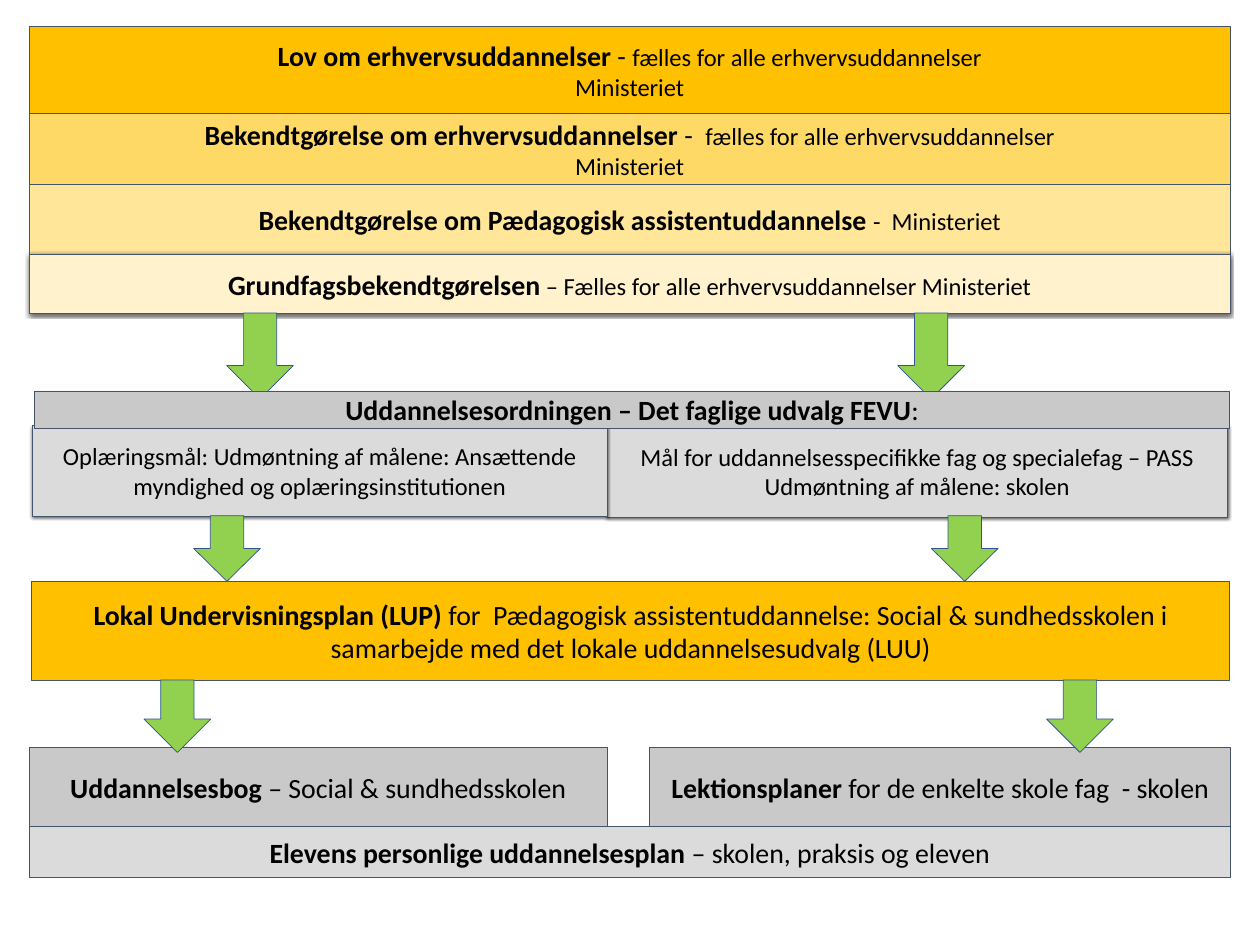
from lxml.etree import SubElement
from pptx import Presentation
from pptx.dml.color import RGBColor
from pptx.enum.shapes import MSO_SHAPE as Shape
from pptx.enum.text import MSO_ANCHOR as Anchor, PP_ALIGN as Align
from pptx.oxml.ns import qn
from pptx.util import Inches, Pt

COLORS = {
    "gold": "FFC000", "amber": "FFD966", "sand": "FFE699", "cream": "FFF2CC",
    "gray": "C9C9C9", "silver": "DBDBDB", "green": "92D050",
    "border": "44546A", "arrow border": "325491", "text": "000000",
}

# Text formats: bold heading, large plain, small plain
FORMATS = {
    "heading": {"size": Pt(37.6), "bold": True},
    "large": {"size": Pt(37.6), "bold": False},
    "small": {"size": Pt(33.1), "bold": False},
}

# Rules from the ministry, stacked: height, fill, shadow, paragraphs of (text, format)
STACK_LEFT, STACK_TOP, STACK_WIDTH = 0.55, 0.49, 22.51
MINISTRY_RULES = [
    (1.64, "gold", False, [
        [("Lov om erhvervsuddannelser ", "heading"), ("- ", "large"),
         ("fælles for alle erhvervsuddannelser", "small")],
        [("Ministeriet", "small")]]),
    (1.33, "amber", False, [
        [("Bekendtgørelse om erhvervsuddannelser ", "heading"), ("-  ", "large"),
         ("fælles for alle erhvervsuddannelser", "small")],
        [("Ministeriet", "small")]]),
    (1.31, "sand", False, [
        [("Bekendtgørelse om Pædagogisk assistentuddannelse ", "heading"),
         ("-  Ministeriet", "small")]]),
    (1.11, "cream", True, [
        [("Grundfagsbekendtgørelsen", "heading"),
         (" – Fælles for alle erhvervsuddannelser Ministeriet", "small")]]),
]

# Lower boxes: (left, top, width, height), fill, shadow, paragraphs
PLANS = [
    ((11.38, 7.98, 11.63, 1.72), "silver", True, [
        [("Mål for uddannelsesspecifikke fag og specialefag – PASS", "small")],
        [("Udmøntning af målene: skolen", "small")]]),
    ((0.61, 7.98, 10.77, 1.7), "silver", True, [
        [("Oplæringsmål: Udmøntning af målene: Ansættende myndighed "
          "og oplæringsinstitutionen", "small")]]),
    ((0.59, 10.9, 22.46, 1.85), "gold", False, [
        [("Lokal Undervisningsplan (LUP) ", "heading"),
         ("for  Pædagogisk assistentuddannelse: Social & sundhedsskolen i "
          "samarbejde med det lokale uddannelsesudvalg (LUU)", "large")]]),
    ((0.55, 14.02, 10.83, 1.48), "gray", False, [
        [("Uddannelsesbog", "heading"), (" – Social & sundhedsskolen", "large")]]),
    ((12.18, 14.02, 10.89, 1.48), "gray", False, [
        [("Lektionsplaner ", "heading"),
         ("for de enkelte skole fag  - skolen", "large")]]),
    ((0.55, 15.5, 22.51, 0.96), "silver", False, [
        [("Elevens personlige uddannelsesplan ", "heading"),
         ("– skolen, praksis og eleven", "large")]]),
]
PROGRAMME_HEADER = ((0.65, 7.33, 22.4, 0.71), "gray", False, [
    [("Uddannelsesordningen – Det faglige udvalg FEVU", "heading"), (":", "large")]])

# Arrow pairs: left arrow, right arrow, top, bottom
ARROW_WIDTH = 1.25
ARROW_PAIRS = [
    (4.25, 16.83, 5.87, 7.48),
    (3.63, 17.46, 9.67, 10.9),
    (2.7, 19.62, 12.75, 14.11),
]


def rgb(name):
    return RGBColor.from_string(COLORS[name])


def add_block(slide, kind, bounds, fill, border="border", line_width=1):
    shape = slide.shapes.add_shape(kind, *(Inches(value) for value in bounds))
    shape.shadow.inherit = False
    shape.fill.solid()
    shape.fill.fore_color.rgb = rgb(fill)
    shape.line.color.rgb = rgb(border)
    shape.line.width = Pt(line_width)
    return shape


def add_shadow(shape):
    effects = shape._element.spPr.find(qn("a:effectLst"))
    shadow = SubElement(effects, qn("a:outerShdw"), blurRad=str(Pt(4.5)),
                        dist=str(Pt(1.5)), dir="5400000", rotWithShape="0")
    color = SubElement(shadow, qn("a:srgbClr"), val=COLORS["text"])
    SubElement(color, qn("a:alpha"), val="63000")


def add_box(slide, bounds, fill, shadow, paragraphs):
    shape = add_block(slide, Shape.RECTANGLE, bounds, fill,
                      line_width=0.75 if shadow else 1)
    if shadow:
        add_shadow(shape)
    frame = shape.text_frame
    frame.word_wrap = True
    frame.vertical_anchor = Anchor.MIDDLE
    for index, runs in enumerate(paragraphs):
        paragraph = frame.add_paragraph() if index else frame.paragraphs[0]
        paragraph.alignment = Align.CENTER
        for text, style in runs:
            run = paragraph.add_run()
            run.text = text
            run.font.name = "Calibri"
            run.font.color.rgb = rgb("text")
            for name, value in FORMATS[style].items():
                setattr(run.font, name, value)


def main():
    presentation = Presentation()
    presentation.slide_width = Inches(23.62)
    presentation.slide_height = Inches(17.72)
    slide = presentation.slides.add_slide(presentation.slide_layouts[6])

    # Ministry rules, each directly below the one before
    top = STACK_TOP
    for height, *content in MINISTRY_RULES:
        add_box(slide, (STACK_LEFT, top, STACK_WIDTH, height), *content)
        top += height

    # Goals, local plan and student plans
    for plan in PLANS:
        add_box(slide, *plan)

    # Arrows between the levels
    for left, right, top, bottom in ARROW_PAIRS:
        for x in (left, right):
            add_block(slide, Shape.DOWN_ARROW, (x, top, ARROW_WIDTH, bottom - top),
                      "green", "arrow border")

    # Header covering the tips of the first arrows
    add_box(slide, *PROGRAMME_HEADER)

    presentation.save("out.pptx")


if __name__ == "__main__":
    main()
